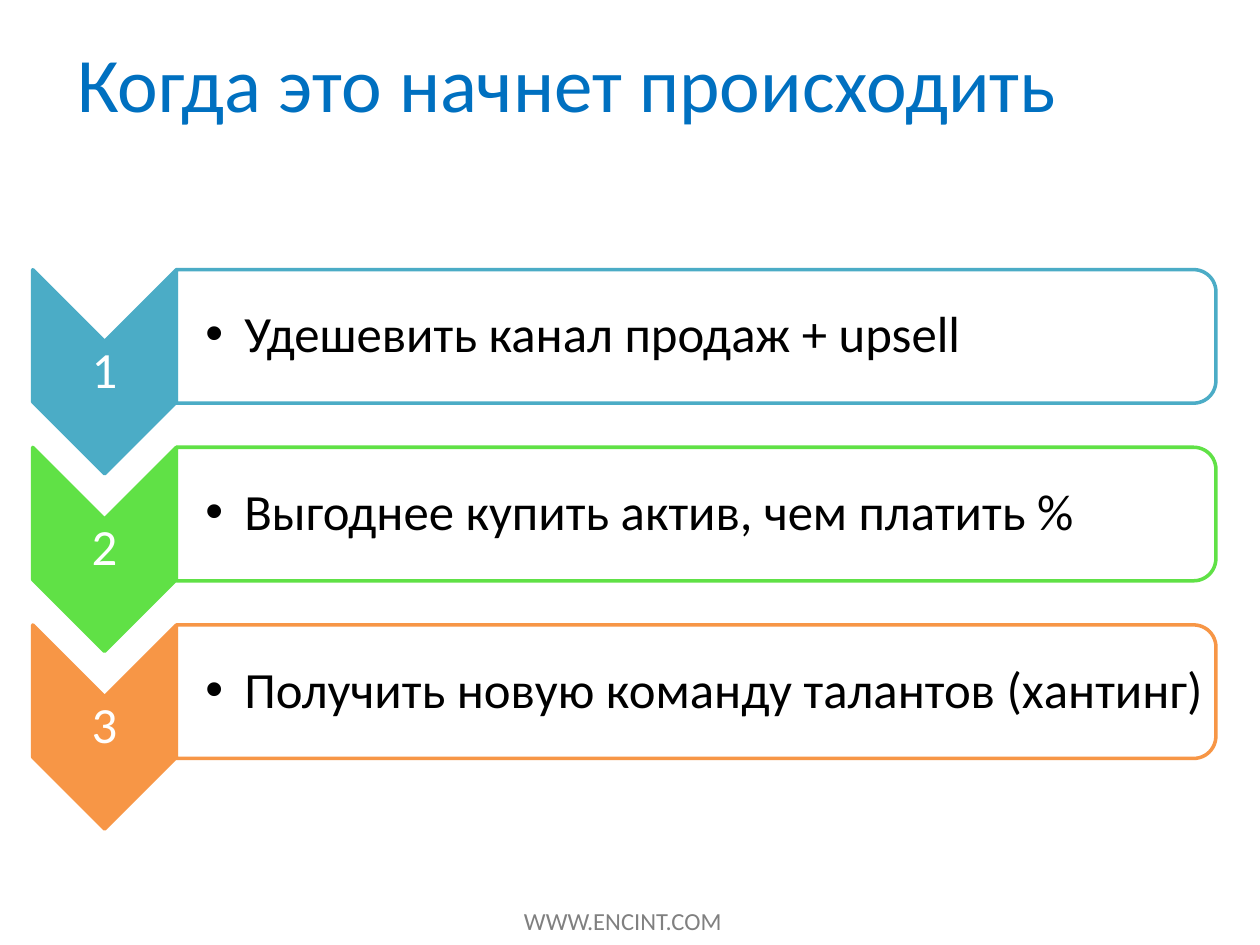
from dataclasses import dataclass

from lxml import etree
from pptx import Presentation
from pptx.dml.color import RGBColor
from pptx.enum.shapes import MSO_SHAPE
from pptx.enum.text import MSO_ANCHOR, PP_ALIGN
from pptx.oxml.ns import qn
from pptx.util import Inches, Pt

CHEVRON = MSO_SHAPE.CHEVRON
PANEL = MSO_SHAPE.ROUND_2_SAME_RECTANGLE
MIDDLE, TOP = MSO_ANCHOR.MIDDLE, MSO_ANCHOR.TOP
LEFT, CENTER = PP_ALIGN.LEFT, PP_ALIGN.CENTER

FONT = "Calibri"
SLIDE_W, SLIDE_H = 10, 7.5
ROW_TOP, ROW_PITCH = 2.14, 1.41
CHEVRON_LEFT, CHEVRON_W, CHEVRON_H = 0.26, 1.14, 1.62
PANEL_LEFT = CHEVRON_LEFT + CHEVRON_W
PANEL_W, PANEL_H = 8.25, 1.06
INSET = 0.02


@dataclass
class Box:
    left: float
    top: float
    width: float
    height: float


@dataclass
class Step:
    number: str
    text: str
    color: str


STEPS = [
    Step("1", "Удешевить канал продаж + upsell", "4BACC6"),
    Step("2", "Выгоднее купить актив, чем платить %", "60E146"),
    Step("3", "Получить новую команду талантов (хантинг)", "F79646"),
]


def rgb(color: str) -> RGBColor:
    return RGBColor.from_string(color)


def add_turned_shape(slide, kind, box: Box, fill: str, line: str):
    """Add a shape turned by 90 degrees that covers box once turned."""
    left = box.left + (box.width - box.height) / 2
    top = box.top + (box.height - box.width) / 2
    s = slide.shapes.add_shape(kind, Inches(left), Inches(top),
                               Inches(box.height), Inches(box.width))
    s.rotation = 90
    s.shadow.inherit = False
    s.fill.solid()
    s.fill.fore_color.rgb = rgb(fill)
    s.line.color.rgb = rgb(line)
    s.line.width = Pt(2)
    return s


def set_opacity(s, percent: int) -> None:
    color = s.fill._xPr.find(qn("a:solidFill"))[0]
    etree.SubElement(color, qn("a:alpha")).set("val", str(percent * 1000))


def add_text(slide, box: Box, text: str, size: int, color: str,
             align=LEFT, anchor=MIDDLE, wrap: bool = True):
    s = slide.shapes.add_textbox(*map(Inches, (box.left, box.top, box.width, box.height)))
    tf = s.text_frame
    tf.word_wrap = wrap
    tf.vertical_anchor = anchor
    p = tf.paragraphs[0]
    p.alignment = align
    r = p.add_run()
    r.text = text
    r.font.name = FONT
    r.font.size = Pt(size)
    r.font.color.rgb = rgb(color)
    return tf


def tighten(tf, left_inset: float = INSET) -> None:
    tf.margin_left = Inches(left_inset)
    tf.margin_top = tf.margin_right = tf.margin_bottom = Inches(INSET)
    tf.paragraphs[0].line_spacing = 0.9


def add_bullet(p, indent: float) -> None:
    pPr = p._p.get_or_add_pPr()
    pPr.set("marL", str(Inches(indent)))
    pPr.set("indent", str(-Inches(indent)))
    etree.SubElement(pPr, qn("a:buFont")).set("typeface", "Arial")
    etree.SubElement(pPr, qn("a:buChar")).set("char", "•")


def add_step(slide, step: Step, row: int) -> None:
    top = ROW_TOP + row * ROW_PITCH
    add_turned_shape(slide, CHEVRON, Box(CHEVRON_LEFT, top, CHEVRON_W, CHEVRON_H),
                     step.color, step.color)
    number_top = top + CHEVRON_W / 2
    number_box = Box(CHEVRON_LEFT, number_top, CHEVRON_W, CHEVRON_H - CHEVRON_W)
    tighten(add_text(slide, number_box, step.number, 29, "FFFFFF", CENTER))

    panel_box = Box(PANEL_LEFT, top, PANEL_W, PANEL_H)
    panel = add_turned_shape(slide, PANEL, panel_box, "FFFFFF", step.color)
    set_opacity(panel, 90)
    text_box = Box(PANEL_LEFT, top + 0.05, PANEL_W - 0.06, PANEL_H - 0.1)
    tf = add_text(slide, text_box, step.text, 29, "000000")
    tighten(tf, 0.23)
    add_bullet(tf.paragraphs[0], 0.31)


def main() -> None:
    prs = Presentation()
    prs.slide_width, prs.slide_height = Inches(SLIDE_W), Inches(SLIDE_H)
    slide = prs.slides.add_slide(prs.slide_layouts[6])
    add_text(slide, Box(4.06, 7.14, 1.78, 0.34), "WWW.ENCINT.COM", 14, "808080",
             anchor=TOP, wrap=False)
    add_text(slide, Box(0, 0.02, 0.9 * SLIDE_W, SLIDE_H / 6),
             "Когда это начнет происходить", 44, "0070C0", CENTER)
    for row, step in enumerate(STEPS):
        add_step(slide, step, row)
    prs.save("out.pptx")


if __name__ == "__main__":
    main()
